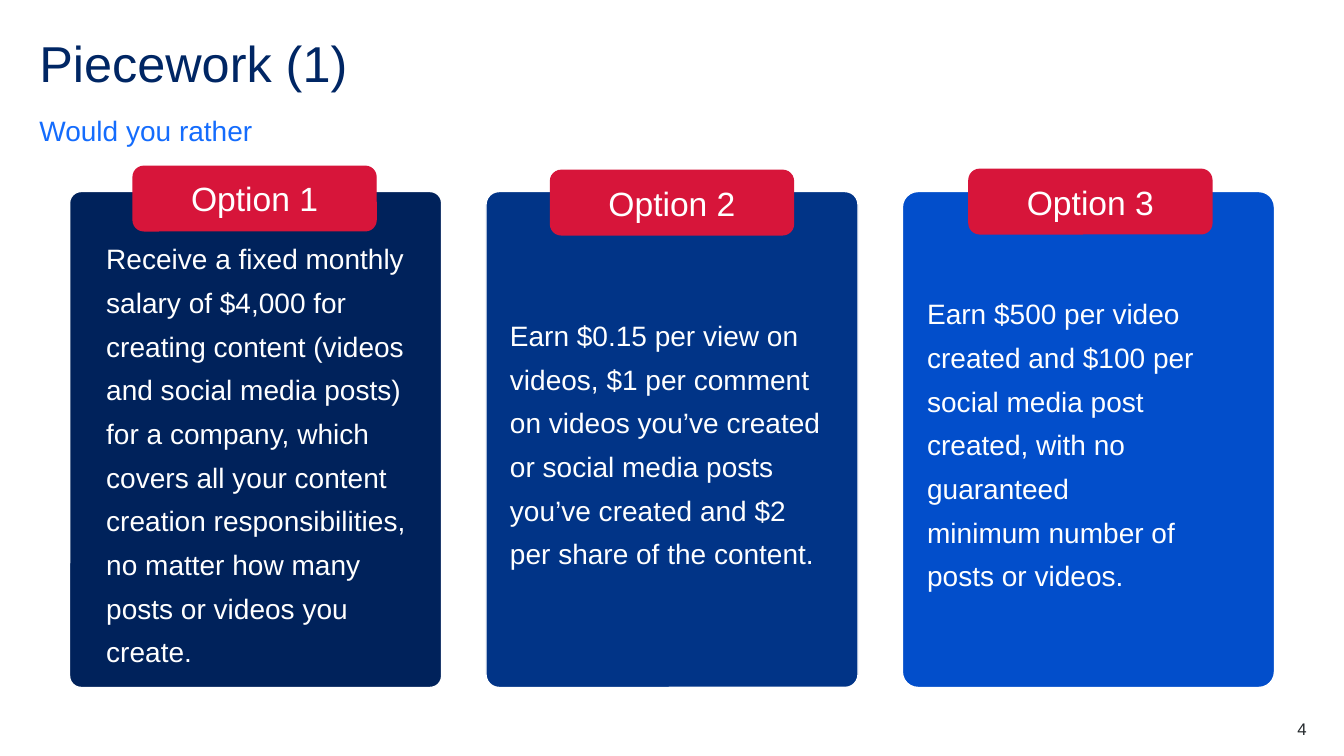
from pptx import Presentation
from pptx import util as u
from pptx.dml.color import RGBColor
from pptx.enum import shapes, text

COLORS = {
    "navy": "002664",
    "bright": "146CFD",
    "white": "FFFFFF",
    "red": "D7153A",
    "ink": "22272B",
    "card1": "00225B",
    "card2": "013487",
    "card3": "024ECB",
}

OPTIONS = [
    ("Option 1", "card1", 0.031, 1.32, 1.65, (0.33, 0.28, 0.2, 0.07),
     "Receive a fixed monthly salary of $4,000 for creating content (videos and "
     "social media posts) for a company, which covers all your content creation "
     "responsibilities, no matter how many posts or videos you create."),
    ("Option 2", "card2", 0.035, 5.46, 1.69, (0.2, 0.07, 0.2, 0.07),
     "Earn $0.15 per view on videos, $1 per comment on videos you’ve created or "
     "social media posts you’ve created and $2 per share of the content."),
    ("Option 3", "card3", 0.042, 9.61, 1.68, (0.2, 0.07, 0.2, 0.07),
     "Earn $500 per video created and $100 per social media post created, with no "
     "guaranteed\nminimum number of posts or videos."),
]


class Deck:
    font = "Arial"

    def __init__(self):
        self.prs = Presentation()
        self.prs.slide_width = u.Inches(13.33)
        self.prs.slide_height = u.Inches(7.5)
        self.s = self.prs.slides.add_slide(self.prs.slide_layouts[6])

    def color(self, name):
        return RGBColor.from_string(COLORS[name])

    def set_text(self, sp, words, size, color, align, anchor, insets, spacing):
        tf = sp.text_frame
        tf.word_wrap = True
        tf.vertical_anchor = anchor
        tf.margin_left, tf.margin_top, tf.margin_right, tf.margin_bottom = map(u.Inches, insets)
        p = tf.paragraphs[0]
        p.text = words
        p.alignment = align
        p.line_spacing = spacing
        for r in p.runs:
            r.font.name = self.font
            r.font.size = u.Pt(size)
            r.font.color.rgb = self.color(color)

    def label(self, box, words, size, color, align=text.PP_ALIGN.LEFT,
              anchor=text.MSO_ANCHOR.TOP, spacing=1.0):
        sp = self.s.shapes.add_textbox(*map(u.Inches, box))
        self.set_text(sp, words, size, color, align, anchor, (0, 0, 0, 0), spacing)

    def panel(self, box, words, size, fill, line, radius=None,
              align=text.PP_ALIGN.LEFT, insets=(0.1, 0.05, 0.1, 0.05), spacing=1.0):
        sp = self.s.shapes.add_shape(shapes.MSO_SHAPE.ROUNDED_RECTANGLE, *map(u.Inches, box))
        sp.shadow.inherit = False
        if radius is not None:
            sp.adjustments[0] = radius
        sp.fill.solid()
        sp.fill.fore_color.rgb = self.color(fill)
        sp.line.color.rgb = self.color(line)
        sp.line.width = u.Pt(1)
        self.set_text(sp, words, size, "white", align, text.MSO_ANCHOR.MIDDLE, insets, spacing)


def main():
    deck = Deck()
    deck.label((0.39, 0.39, 12.56, 0.6), "Piecework (1)", 36, "navy", spacing=0.9)
    deck.label((0.39, 1.07, 12.56, 0.39), "Would you rather", 20, "bright",
               anchor=text.MSO_ANCHOR.BOTTOM, spacing=1.5)
    for i, (name, fill, radius, left, top, insets, offer) in enumerate(OPTIONS):
        deck.panel((0.69 + 4.13 * i, 1.9, 3.69, 4.92), offer, 20, fill, "white",
                   radius=radius, insets=insets, spacing=1.3)
        deck.panel((left, top, 2.41, 0.64), name, 24, "red", "red",
                   align=text.PP_ALIGN.CENTER)
    deck.label((12.17, 7.13, 0.79, 0.2), "4", 12, "ink", align=text.PP_ALIGN.RIGHT)
    deck.prs.save("out.pptx")


if __name__ == "__main__":
    main()
